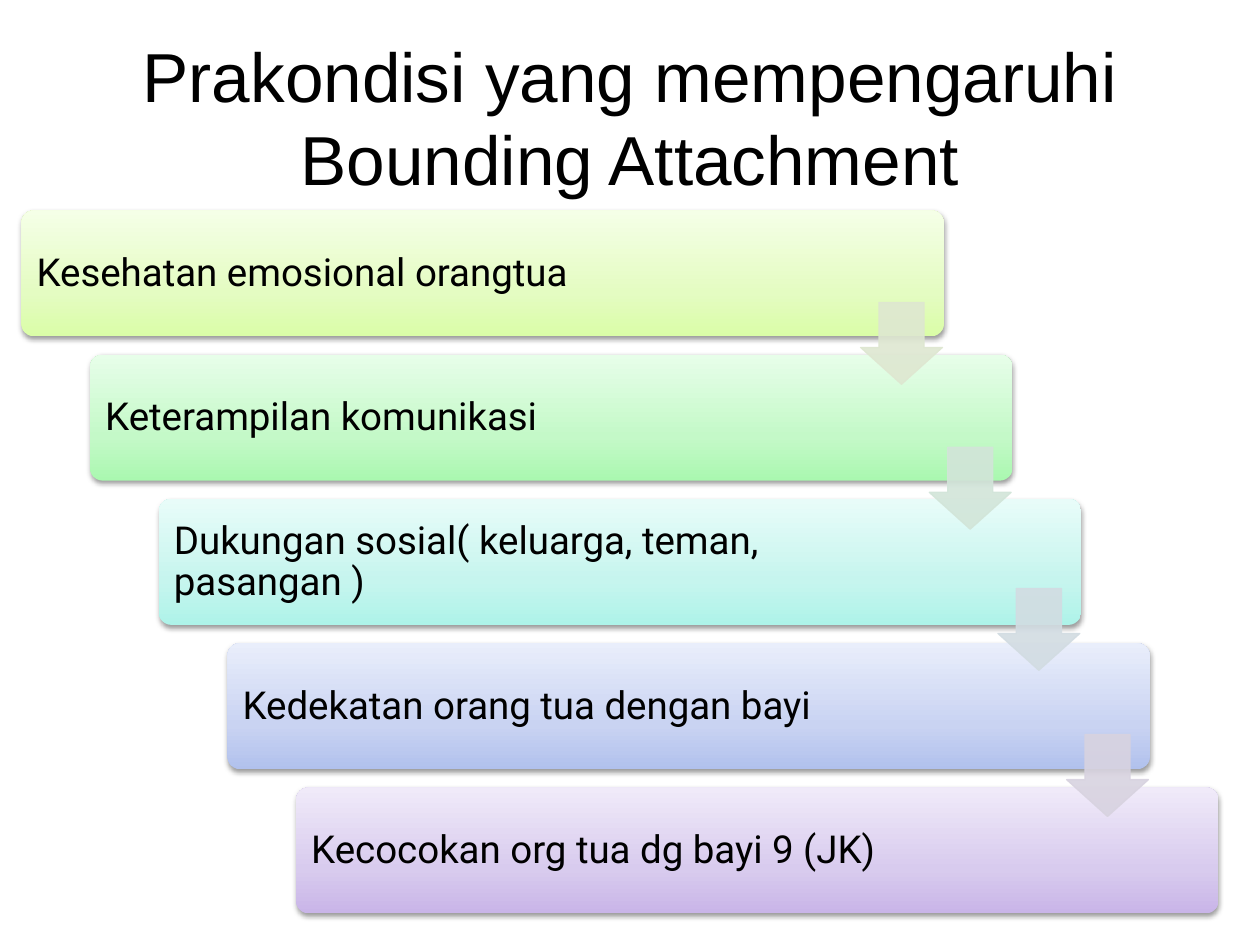
import dataclasses

import lxml.etree
import pptx
import pptx.dml.color
import pptx.enum.shapes
import pptx.enum.text
import pptx.oxml
import pptx.oxml.ns
import pptx.util

Inches = pptx.util.Inches
Shape = pptx.enum.shapes.MSO_SHAPE
Align = pptx.enum.text.PP_ALIGN
NAMESPACE = pptx.oxml.ns.nsdecls("a")

COLOURS = {
    "text": "000000",
    "lime_dark": "DAFDA7", "lime_mid": "E4FCC2", "lime_light": "F5FFE7",
    "green_dark": "AAF8B0", "green_mid": "C4F9C8", "green_light": "E7FEE9",
    "teal_dark": "AEF3E9", "teal_mid": "C6F5EE", "teal_light": "E8FCF9",
    "blue_dark": "B1C1ED", "blue_mid": "C9D3F2", "blue_light": "E9EEFB",
    "violet_dark": "C9B5E8", "violet_mid": "D8CBEE", "violet_light": "F0EAF9",
    "lime_arrow": "DEE7D1", "green_arrow": "D2E5D9",
    "teal_arrow": "D2DCE2", "blue_arrow": "D8D3E0",
}


@dataclasses.dataclass
class Step:
    text: str
    hue: str
    text_width: float = 6.06
    arrow_top: float | None = None


STEPS = [
    Step("Kesehatan emosional orangtua", "lime", 6.11, 2.4),
    Step("Keterampilan komunikasi", "green", arrow_top=3.55),
    Step("Dukungan sosial( keluarga, teman, pasangan )", "teal", arrow_top=4.67),
    Step("Kedekatan orang tua dengan bayi", "blue", arrow_top=5.83),
    Step("Kecocokan org tua dg bayi 9 (JK)", "violet"),
]
FIRST_LEFT, LAST_LEFT = 0.17, 2.35
FIRST_TOP, LAST_TOP = 1.67, 6.25
BAR_WIDTH, BAR_HEIGHT = 7.32, 1
ARROW_OFFSET, ARROW_SIZE = 6.66, 0.65


def set_format(target: object, values: dict) -> None:
    for name, value in values.items():
        setattr(target, name, value)


def rgb(name: str) -> pptx.dml.color.RGBColor:
    return pptx.dml.color.RGBColor.from_string(COLOURS[name])


def add_text(slide, box: tuple, text: str, font: dict, paragraph_format: dict,
             margin: dict) -> None:
    shape = slide.shapes.add_textbox(*map(Inches, box))
    set_format(shape.text_frame, {
        "word_wrap": True,
        "vertical_anchor": pptx.enum.text.MSO_ANCHOR.MIDDLE,
        **margin,
    })
    paragraph = shape.text_frame.paragraphs[0]
    set_format(paragraph, paragraph_format)
    run = paragraph.add_run()
    run.text = text
    set_format(run.font, font)
    run.font.color.rgb = rgb("text")


def add_bar(slide, step: Step, left: float, top: float) -> None:
    shape = slide.shapes.add_shape(
        Shape.ROUNDED_RECTANGLE, *map(Inches, (left, top, BAR_WIDTH, BAR_HEIGHT)))
    shape.adjustments[0] = 0.1
    shape.line.fill.background()
    shape.shadow.inherit = False
    properties = shape.element.spPr
    stops = "".join(
        f'<a:gs pos="{position * 1000}"><a:srgbClr val="{COLOURS[f"{step.hue}_{tone}"]}"/></a:gs>'
        for position, tone in ((0, "dark"), (35, "mid"), (100, "light")))
    properties.find(pptx.oxml.ns.qn("a:prstGeom")).addnext(pptx.oxml.parse_xml(
        f'<a:gradFill {NAMESPACE} rotWithShape="1"><a:gsLst>{stops}</a:gsLst>'
        '<a:lin ang="16200000" scaled="0"/></a:gradFill>'))
    properties.find(pptx.oxml.ns.qn("a:effectLst")).append(pptx.oxml.parse_xml(
        f'<a:outerShdw {NAMESPACE} blurRad="40000" dist="20000" dir="5400000" rotWithShape="0">'
        '<a:srgbClr val="000000"><a:alpha val="38000"/></a:srgbClr></a:outerShdw>'))
    margins = ("margin_left", "margin_top", "margin_right", "margin_bottom")
    add_text(slide, (left + 0.03, top + 0.03, step.text_width, 0.95), step.text,
             {"name": "Roboto", "size": pptx.util.Pt(22)},
             {"alignment": Align.LEFT, "line_spacing": 0.9},
             dict.fromkeys(margins, Inches(0.09)))


def add_arrow(slide, step: Step, left: float) -> None:
    shape = slide.shapes.add_shape(
        Shape.DOWN_ARROW, *map(Inches, (left, step.arrow_top, ARROW_SIZE, ARROW_SIZE)))
    shape.adjustments[0] = 0.55
    shape.adjustments[1] = 0.45
    shape.line.width = pptx.util.Pt(0.75)
    for fill in (shape.fill, shape.line.fill):
        fill.solid()
        fill.fore_color.rgb = rgb(f"{step.hue}_arrow")
    for colour in shape.element.spPr.iter(pptx.oxml.ns.qn("a:srgbClr")):
        lxml.etree.SubElement(colour, pptx.oxml.ns.qn("a:alpha"), val="90000")
    shape.shadow.inherit = False


def main() -> None:
    presentation = pptx.Presentation()
    set_format(presentation, {"slide_width": Inches(10), "slide_height": Inches(7.5)})
    slide = presentation.slides.add_slide(presentation.slide_layouts[6])
    add_text(slide, (0.5, 0.3, 9, 1.25), "Prakondisi yang mempengaruhi Bounding Attachment",
             {"name": "Arial", "size": pptx.util.Pt(39.6)}, {"alignment": Align.CENTER}, {})
    gaps = len(STEPS) - 1
    lefts = [FIRST_LEFT + (LAST_LEFT - FIRST_LEFT) * index / gaps for index in range(len(STEPS))]
    tops = [FIRST_TOP + (LAST_TOP - FIRST_TOP) * index / gaps for index in range(len(STEPS))]
    for step, left, top in zip(STEPS, lefts, tops):
        add_bar(slide, step, left, top)
    for step, left in zip(STEPS, lefts):
        if step.arrow_top is not None:
            add_arrow(slide, step, left + ARROW_OFFSET)
    presentation.save("out.pptx")


if __name__ == "__main__":
    main()
